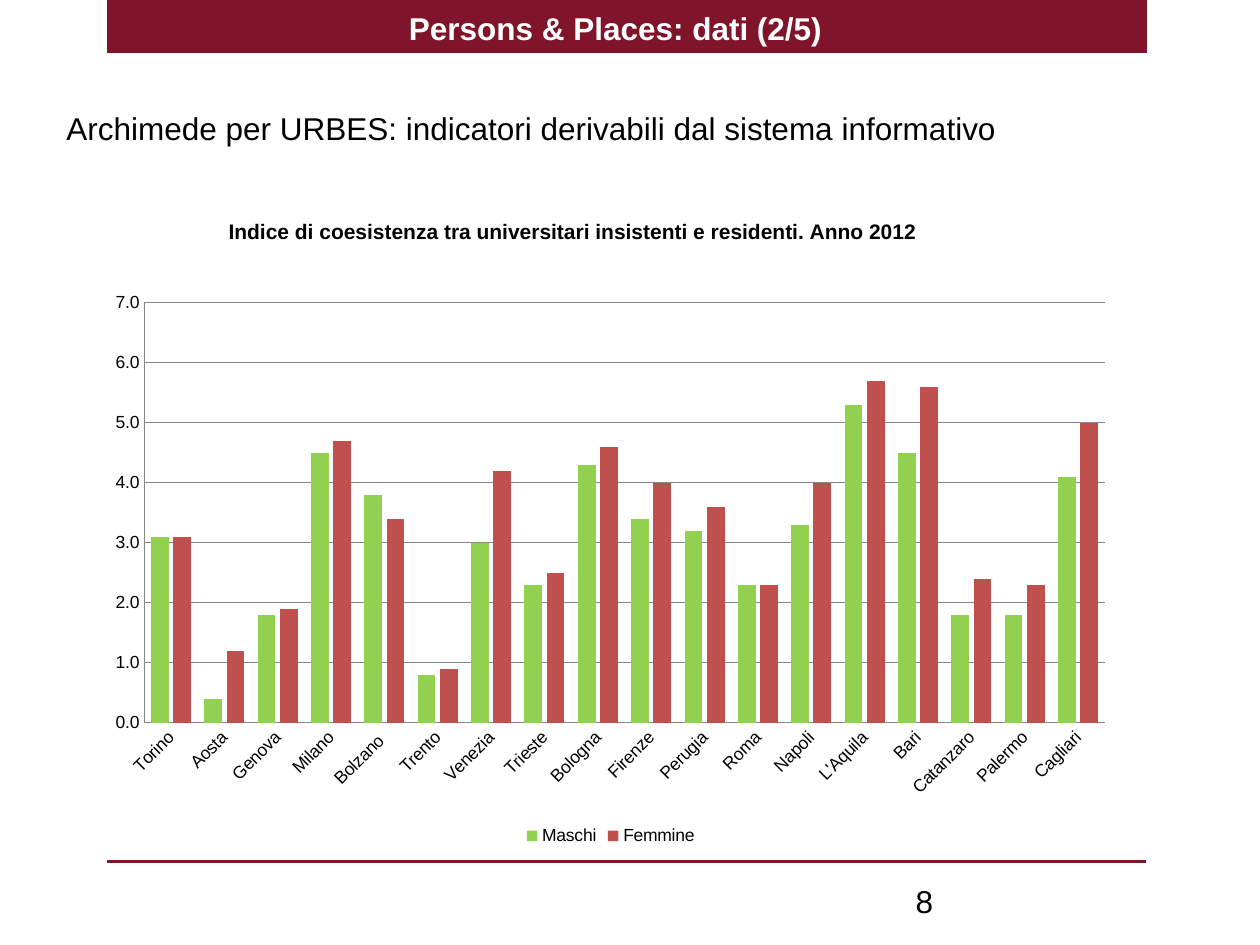
from dataclasses import dataclass

import lxml.etree
import pptx
import pptx.chart.data
import pptx.dml.color
import pptx.enum.chart
import pptx.enum.shapes
import pptx.enum.text
import pptx.oxml.ns
import pptx.util

Cm = pptx.util.Cm
Pt = pptx.util.Pt
qn = pptx.oxml.ns.qn

FONT = "Arial"
COLOURS = {
    "maroon": "7F142A",
    "white": "FFFFFF",
    "black": "000000",
    "grid": "868686",
    "men": "92D050",
    "women": "C0504D",
}
CITIES = [
    "Torino", "Aosta", "Genova", "Milano", "Bolzano ", "Trento",
    "Venezia", "Trieste", "Bologna", "Firenze", "Perugia", "Roma",
    "Napoli", "L'Aquila", "Bari", "Catanzaro", "Palermo", "Cagliari",
]


@dataclass
class Area:
    left: float
    top: float
    width: float
    height: float

    def lengths(self) -> list:
        return [Cm(n) for n in (self.left, self.top, self.width, self.height)]


@dataclass
class Label:
    text: str
    area: Area


@dataclass
class Series:
    name: str
    colour: str
    values: list


LABELS = [
    Label("Archimede per URBES: indicatori derivabili dal sistema informativo",
          Area(1.09, 2.08, 23.8, 1.02)),
    Label("8", Area(18.21, 17.65, 5.92, 1.02)),
]
SERIES = [
    Series("Maschi", "men", [3.1, 0.4, 1.8, 4.5, 3.8, 0.8, 3, 2.3, 4.3,
                             3.4, 3.2, 2.3, 3.3, 5.3, 4.5, 1.8, 1.8, 4.1]),
    Series("Femmine", "women", [3.1, 1.2, 1.9, 4.7, 3.4, 0.9, 4.2, 2.5, 4.6,
                                4, 3.6, 2.3, 4, 5.7, 5.6, 2.4, 2.3, 5]),
]


def rgb(name: str) -> pptx.dml.color.RGBColor:
    return pptx.dml.color.RGBColor.from_string(COLOURS[name])


def style_font(font, size: float, colour: str, bold: bool = False) -> None:
    font.name = FONT
    font.size = Pt(size)
    font.bold = bold
    font.color.rgb = rgb(colour)


def add_span(para, text: str, size: float, colour: str, bold: bool = False) -> None:
    span = para.add_run()
    span.text = text
    style_font(span.font, size, colour, bold)


def add_frame(page) -> None:
    band = page.shapes.add_shape(
        pptx.enum.shapes.MSO_SHAPE.RECTANGLE, *Area(2.16, 0, 20.96, 1.07).lengths())
    band.shadow.inherit = False
    band.fill.solid()
    band.fill.fore_color.rgb = rgb("maroon")
    band.line.fill.background()
    rule = page.shapes.add_connector(
        pptx.enum.shapes.MSO_CONNECTOR.STRAIGHT,
        Cm(2.16), Cm(17.37), Cm(23.11), Cm(17.37))
    rule.line.color.rgb = rgb("maroon")
    rule.line.width = Pt(2)
    lxml.etree.SubElement(rule._element.spPr, qn("a:effectLst"))


def format_title(page, text: str) -> None:
    title = page.shapes.title
    title.left, title.top, title.width, title.height = Area(1.98, 0, 21.03, 1.12).lengths()
    frame = title.text_frame
    frame.auto_size = pptx.enum.text.MSO_AUTO_SIZE.NONE
    frame.vertical_anchor = pptx.enum.text.MSO_ANCHOR.MIDDLE
    para = frame.paragraphs[0]
    para.alignment = pptx.enum.text.PP_ALIGN.CENTER
    add_span(para, text, 18, "white", True)
    page.shapes._spTree.append(title._element)


def add_label(page, label: Label) -> None:
    box = page.shapes.add_textbox(*label.area.lengths())
    box.text_frame.word_wrap = True
    add_span(box.text_frame.paragraphs[0], label.text, 18, "black")


def place_in_chart(parent, position: int, settings: dict) -> None:
    for old in parent.findall(qn("c:layout")):
        parent.remove(old)
    layout = lxml.etree.Element(qn("c:layout"))
    manual = lxml.etree.SubElement(layout, qn("c:manualLayout"))
    for tag, value in settings.items():
        lxml.etree.SubElement(manual, qn(f"c:{tag}")).set("val", str(value))
    parent.insert(position, layout)


def format_axis(axis) -> None:
    axis.major_tick_mark = pptx.enum.chart.XL_TICK_MARK.NONE
    axis.minor_tick_mark = pptx.enum.chart.XL_TICK_MARK.NONE
    axis.format.line.color.rgb = rgb("grid")
    axis.format.line.width = Pt(0.75)
    style_font(axis.tick_labels.font, 10, "black")


def add_city_chart(page) -> None:
    data = pptx.chart.data.CategoryChartData(number_format="0.0")
    data.categories = CITIES
    for item in SERIES:
        data.add_series(item.name, item.values)
    chart = page.shapes.add_chart(
        pptx.enum.chart.XL_CHART_TYPE.COLUMN_CLUSTERED,
        *Area(1.91, 3.94, 20.8, 13.21).lengths(), data).chart
    style_font(chart.font, 10, "black")

    chart.has_title = True
    add_span(chart.chart_title.text_frame.paragraphs[0],
             "Indice di coesistenza tra universitari insistenti e residenti. Anno 2012",
             12, "black", True)
    place_in_chart(chart.chart_title._element, 1,
                   {"xMode": "edge", "yMode": "edge", "x": 0.126, "y": 0.03})
    place_in_chart(chart._chartSpace.chart.plotArea, 0,
                   {"layoutTarget": "inner", "xMode": "edge", "yMode": "edge",
                    "x": 0.048, "y": 0.164, "w": 0.931, "h": 0.641})

    chart.has_legend = True
    chart.legend.position = pptx.enum.chart.XL_LEGEND_POSITION.BOTTOM
    chart.legend.include_in_layout = False
    style_font(chart.legend.font, 10, "black")

    for axis in (chart.category_axis, chart.value_axis):
        format_axis(axis)
    labels = chart.category_axis._element.find(qn("c:txPr"))
    labels.find(qn("a:bodyPr")).set("rot", "-2700000")
    scale = chart.value_axis
    scale.minimum_scale, scale.maximum_scale, scale.major_unit = 0, 7, 1
    scale.tick_labels.number_format = "0.0"
    scale.tick_labels.number_format_is_linked = False
    scale.has_major_gridlines = True
    scale.major_gridlines.format.line.color.rgb = rgb("grid")
    scale.major_gridlines.format.line.width = Pt(0.75)

    plot = chart.plots[0]
    plot.vary_by_categories = False
    plot.gap_width = 75
    plot.overlap = -25
    for series, item in zip(plot.series, SERIES):
        series.format.fill.solid()
        series.format.fill.fore_color.rgb = rgb(item.colour)


def main() -> None:
    deck = pptx.Presentation()
    deck.slide_width, deck.slide_height = Cm(25.4), Cm(19.05)
    page = deck.slides.add_slide(deck.slide_layouts[5])
    add_frame(page)
    add_city_chart(page)
    format_title(page, "Persons & Places: dati (2/5) ")
    for label in LABELS:
        add_label(page, label)
    deck.save("out.pptx")


if __name__ == "__main__":
    main()
